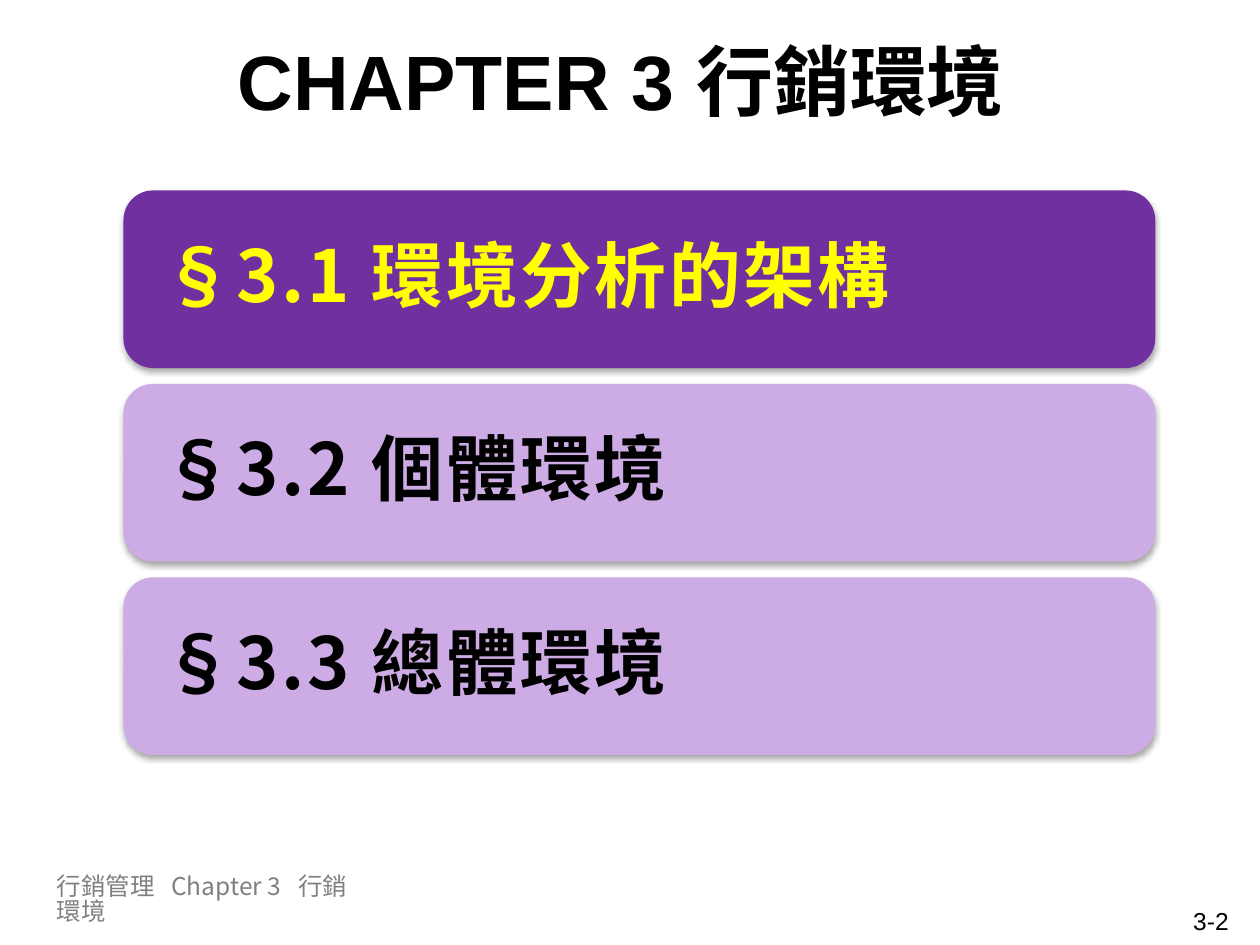
from lxml.etree import SubElement
from pptx import Presentation
from pptx.dml.color import RGBColor
from pptx.enum.shapes import MSO_SHAPE
from pptx.enum.text import MSO_ANCHOR, PP_ALIGN
from pptx.oxml import parse_xml
from pptx.oxml.ns import nsdecls, qn
from pptx.util import Cm, Pt

LATIN, CJK = "Arial", "Noto Sans CJK SC"
BLACK, GRAY, YELLOW = "000000", "808080", "FFFF00"
PURPLE, LILAC = "7030A0", "CDACE6"


def rgb(value):
    return RGBColor.from_string(value)


class SlideBuilder:
    def __init__(self, prs):
        self.s = prs.slides.add_slide(prs.slide_layouts[5])

    def style(self, r, size, color, font, bold=False, spacing=None):
        r.font.size = Pt(size)
        r.font.bold = bold
        r.font.color.rgb = rgb(color)
        r.font.name = font
        SubElement(r.font._element, qn("a:ea")).set("typeface", font)
        if spacing:
            r.font._element.set("spc", str(round(spacing * 100)))

    def place(self, sp, left, top, width, height):
        sp.left, sp.top = Cm(left), Cm(top)
        sp.width, sp.height = Cm(width), Cm(height)

    def title(self, parts, *box):
        """Fill the title with (text, font) parts."""
        sp = self.s.shapes.title
        self.place(sp, *box)
        tf = sp.text_frame
        tf.vertical_anchor = MSO_ANCHOR.MIDDLE
        p = tf.paragraphs[0]
        p.alignment = PP_ALIGN.CENTER
        for text, font in parts:
            r = p.add_run()
            r.text = text
            self.style(r, 44, BLACK, font, bold=True)

    def note(self, text, color, font, align, line_spacing, *box):
        sp = self.s.shapes.add_textbox(*map(Cm, box))
        tf = sp.text_frame
        tf.word_wrap = True
        tf.text = text
        p = tf.paragraphs[0]
        p.alignment = align
        p.line_spacing = line_spacing
        self.style(p.runs[0], 14, color, font)

    def section(self, text, fill, color, *box):
        sp = self.s.shapes.add_shape(MSO_SHAPE.ROUNDED_RECTANGLE, *map(Cm, box))
        sp.fill.solid()
        sp.fill.fore_color.rgb = rgb(fill)
        sp.line.fill.background()
        self.drop_shadow(sp)
        tf = sp.text_frame
        tf.word_wrap = True
        tf.vertical_anchor = MSO_ANCHOR.MIDDLE
        tf.margin_left = tf.margin_right = Cm(0.61)
        tf.margin_top = tf.margin_bottom = Cm(0.61)
        tf.text = text
        p = tf.paragraphs[0]
        p.alignment = PP_ALIGN.LEFT
        p.line_spacing = 0.9
        self.style(p.runs[0], 41, color, CJK, bold=True, spacing=1.5)

    def drop_shadow(self, sp):
        sp.shadow.inherit = False
        effects = sp._element.spPr.find(qn("a:effectLst"))
        effects.append(parse_xml(
            f'<a:outerShdw {nsdecls("a")} blurRad="{Pt(3.1)}" dist="{Pt(1.8)}" '
            f'dir="5400000" rotWithShape="0"><a:srgbClr val="{BLACK}">'
            '<a:alpha val="35000"/></a:srgbClr></a:outerShdw>'))


def main():
    prs = Presentation()
    prs.slide_width, prs.slide_height = Cm(25.4), Cm(19.05)
    slide = SlideBuilder(prs)

    slide.title([("CHAPTER 3 ", LATIN), ("行銷環境", CJK)], 1.09, 0.1, 22.86, 3.02)
    slide.note("行銷管理   Chapter 3   行銷環境", GRAY, CJK, PP_ALIGN.LEFT, 0.85,
               0.89, 17.53, 6.81, 1.02)
    slide.note("3-2", BLACK, LATIN, PP_ALIGN.RIGHT, 1.0, 19.1, 18.14, 5.92, 0.74)

    sections = [
        ("§3.1 環境分析的架構", PURPLE, YELLOW),
        ("§3.2 個體環境", LILAC, BLACK),
        ("§3.3 總體環境", LILAC, BLACK),
    ]
    top, pitch = 3.84, 3.9
    for i, (text, fill, color) in enumerate(sections):
        slide.section(text, fill, color, 2.49, top + i * pitch, 20.8, 3.58)

    prs.save("out.pptx")


if __name__ == "__main__":
    main()
